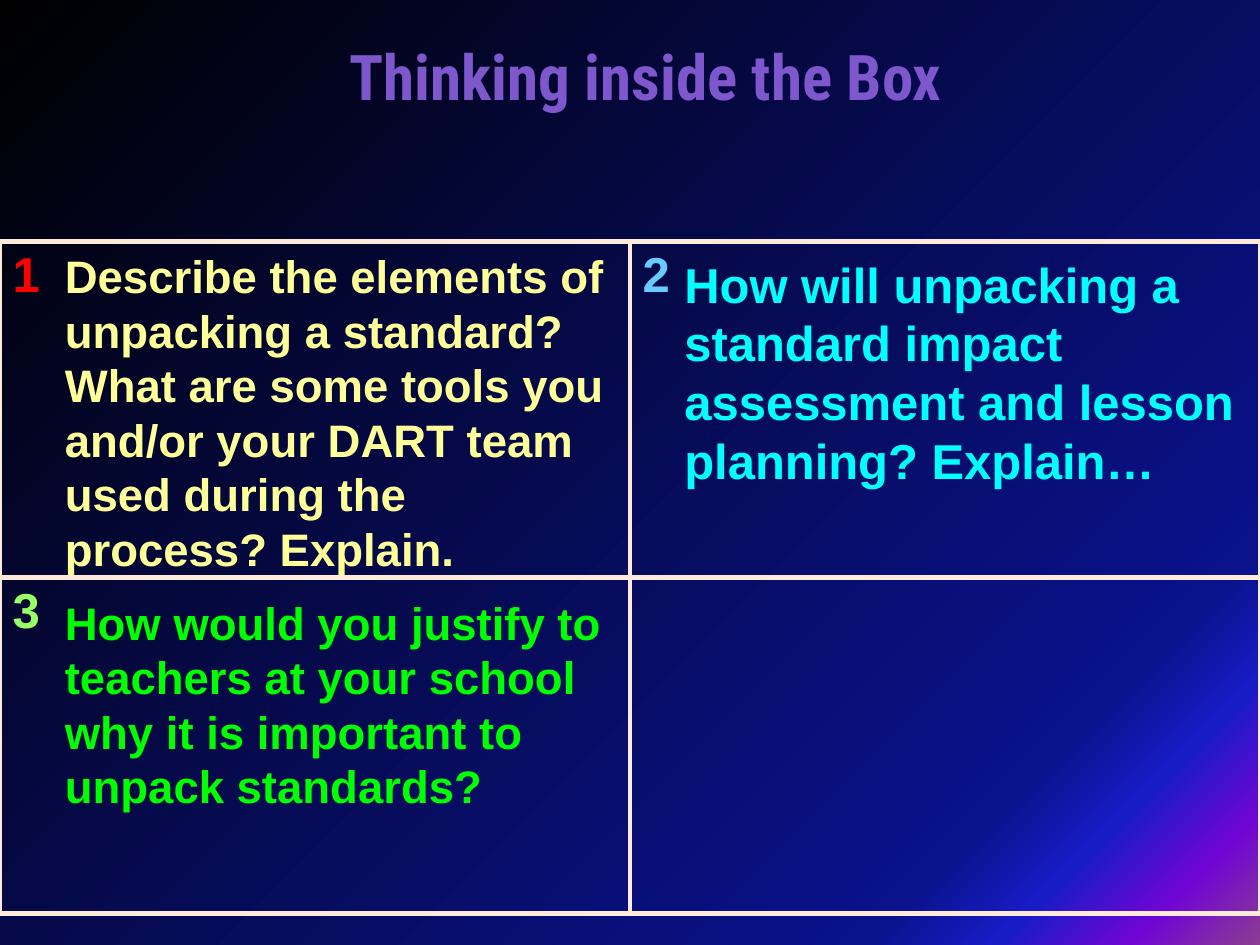
"""Build the slide "Thinking inside the Box" with its grid of questions."""
from lxml.etree import SubElement
from pptx import Presentation
from pptx.dml.color import RGBColor
from pptx.enum.text import MSO_AUTO_SIZE, PP_ALIGN
from pptx.oxml.ns import qn
from pptx.util import Inches, Pt


def shade(root, stops, angle):
    grad = root.find(".//" + qn("a:gradFill"))
    group = grad.find(qn("a:gsLst"))
    group.clear()
    for share, tint in stops:
        stop = SubElement(group, qn("a:gs"), pos=str(share * 1000))
        SubElement(stop, qn("a:srgbClr"), val=tint)
    grad.find(qn("a:lin")).set("ang", str(angle * 60000))


def style(font, tint, **values):
    for name, value in values.items():
        setattr(font, name, value)
    font.color.rgb = RGBColor.from_string(tint)


deck = Presentation()
deck.slide_width, deck.slide_height = Inches(10), Inches(7.5)
col, row = deck.slide_width / 24, deck.slide_height / 24
slide = deck.slides.add_slide(deck.slide_layouts[6])
slide.background.fill.gradient()
shade(slide.element, [(0, "000000"), (82, "0A128C"), (88, "181CC7"),
                      (94, "7005D4"), (100, "8C3D91")], 45)

table = slide.shapes.add_table(2, 2, 0, int(6.14 * row), int(24 * col), int(17.06 * row)).table
table.first_row = table.horz_banding = False
digits = [("1", "FF0000"), ("2", "66CCFF"), ("3", "99FF66"), ("", "")]
for cell, (digit, tint) in zip(table.iter_cells(), digits):
    prop = cell._tc.get_or_add_tcPr()
    for side in ("lnL", "lnR", "lnT", "lnB"):
        edge = SubElement(prop, qn("a:" + side), w=str(Pt(3)))
        paint = SubElement(edge, qn("a:solidFill"))
        SubElement(paint, qn("a:srgbClr"), val="FDEADA")
    cell.fill.background()
    if digit:
        run = cell.text_frame.paragraphs[0].add_run()
        run.text = digit
        style(run.font, tint, name="Arial", size=Pt(28), bold=True)

asks = [
    ("How will unpacking a standard impact assessment and lesson planning? Explain…",
     (12.8, 6.3, 11.1, 6.37), 28, "00FFFF"),
    ("Describe the elements of unpacking a standard? What are some tools you "
     "and/or your DART team used during the process? Explain.",
     (1, 6.14, 11, 8.74), 26, "FFFF99"),
    ("How would you justify to teachers at your school why it is important to "
     "unpack standards?", (1, 14.94, 11, 5.92), 26, "00FF00"),
    ("Thinking inside the Box", (2.6, 0.8, 19.4, 4.13), 36, "7D57CB"),
]
for text, (left, top, wide, high), size, tint in asks:
    box = slide.shapes.add_textbox(int(left * col), int(top * row),
                                   int(wide * col), int(high * row))
    frame = box.text_frame
    para = frame.paragraphs[0]
    run = para.add_run()
    run.text = text
    head = size == 36
    frame.word_wrap = not head
    style(run.font, tint, name="Roboto Condensed" if head else "Arial",
          size=Pt(size), bold=True)
    if head:
        para.alignment = PP_ALIGN.CENTER
        run.font.fill.gradient()
        shade(box.element, [(0, "8462CD"), (25, "7D57CB"), (50, "6836B9"),
                            (75, "7D57CB"), (100, "8462CD")], 90)
    else:
        frame.auto_size = MSO_AUTO_SIZE.SHAPE_TO_FIT_TEXT
        para.line_spacing = Pt(size * 1.2)

deck.save("out.pptx")
